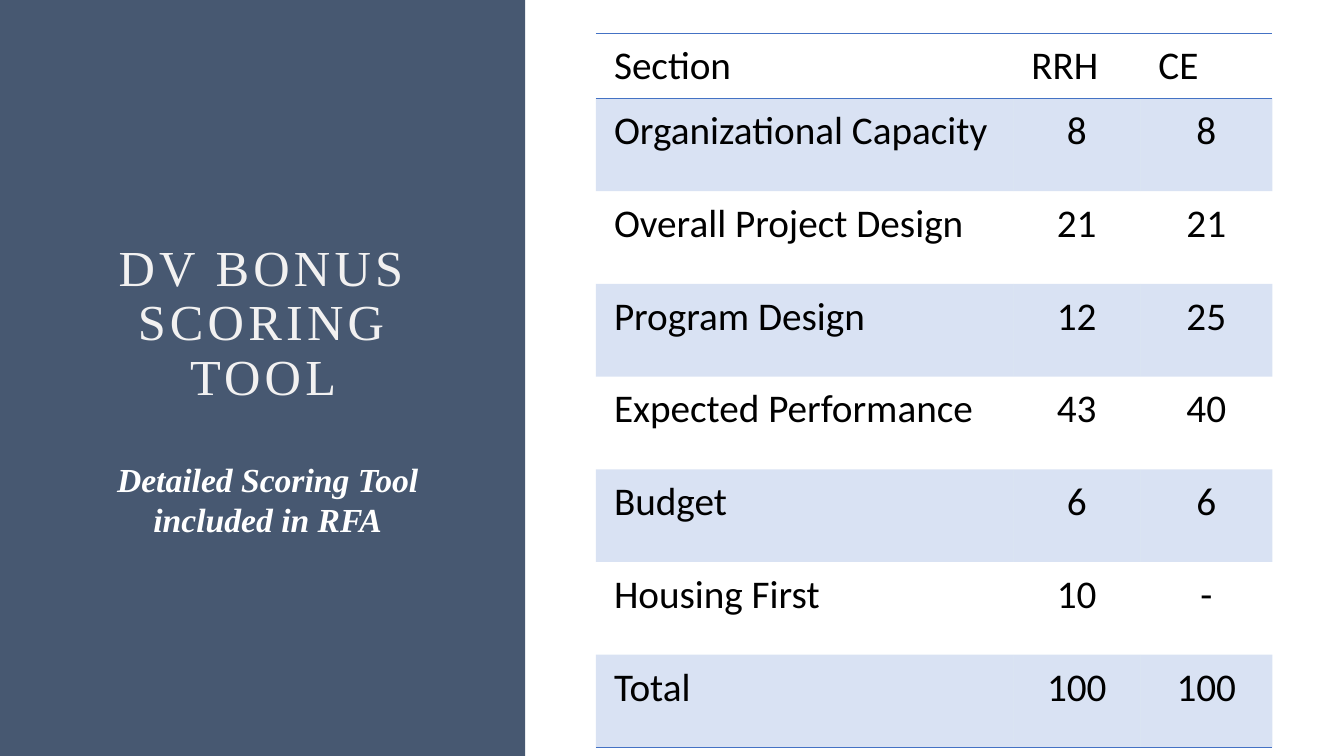
from dataclasses import dataclass

from lxml import etree
from pptx import Presentation, util as u
from pptx.dml.color import RGBColor
from pptx.enum import shapes, text
from pptx.oxml.ns import qn

# Content
TITLE = "DV BONUS SCORING TOOL"
SUBTITLE = "Detailed Scoring Tool included in RFA"
SCORES = [
    ("Section", "RRH", "CE"),
    ("Organizational Capacity", "8", "8"),
    ("Overall Project Design", "21", "21"),
    ("Program Design", "12", "25"),
    ("Expected Performance", "43", "40"),
    ("Budget", "6", "6"),
    ("Housing First", "10", "-"),
    ("Total", "100", "100"),
]


@dataclass(frozen=True)
class Theme:
    panel: str = "475871"
    title: str = "F2F1F1"
    subtitle: str = "FFFFFF"
    ink: str = "000000"
    accent: str = "4472C4"
    band_alpha: int = 20
    serif: str = "Times New Roman"
    sans: str = "Calibri"
    title_size: int = 36
    subtitle_size: int = 24
    cell_size: int = 28
    rule: int = 1


# Layout in inches
WIDTH, HEIGHT = 13.33, 7.5
PANEL_WIDTH = 5.21
TITLE_BOX = (0.94, 0.75, 3.34, 3.33)
SUBTITLE_BOX = (1.02, 4.5, 3.27, 2.25)
TABLE_LEFT, TABLE_TOP = 5.91, 0.33
COLUMNS = (4.14, 1.26, 1.31)
HEADER_HEIGHT, ROW_HEIGHT = 0.62, 0.92
INSET_X, INSET_Y = 0.18, 0.09

theme = Theme()


def style(span, font, size, color, bold=False, italic=False):
    span.font.name = font
    span.font.size = u.Pt(size)
    span.font.color.rgb = RGBColor.from_string(color)
    span.font.bold = bold
    span.font.italic = italic


def add_caption(page, place, words, anchor):
    box = page.shapes.add_textbox(*map(u.Inches, place))
    frame = box.text_frame
    frame.word_wrap = True
    frame.vertical_anchor = anchor
    frame.text = words
    para = frame.paragraphs[0]
    para.alignment = text.PP_ALIGN.CENTER
    return para


def set_borders(cell, top, bottom):
    """Rule the chosen edges and clear the others."""
    edges = {"a:lnL": False, "a:lnR": False, "a:lnT": top, "a:lnB": bottom}
    props = cell._tc.get_or_add_tcPr()
    for place, (tag, ruled) in enumerate(edges.items()):
        line = etree.Element(qn(tag), w=str(u.Pt(theme.rule) if ruled else 0))
        if ruled:
            fill = etree.SubElement(line, qn("a:solidFill"))
            etree.SubElement(fill, qn("a:srgbClr"), val=theme.accent)
        else:
            etree.SubElement(line, qn("a:noFill"))
        props.insert(place, line)


def fill_cell(cell, banded):
    if not banded:
        cell.fill.background()
        return
    cell.fill.solid()
    cell.fill.fore_color.rgb = RGBColor.from_string(theme.accent)
    color = cell._tc.tcPr.find(".//" + qn("a:srgbClr"))
    etree.SubElement(color, qn("a:alpha"), val=str(theme.band_alpha * 1000))


def add_panel(page):
    panel = page.shapes.add_shape(shapes.MSO_SHAPE.RECTANGLE, 0, 0,
                                  u.Inches(PANEL_WIDTH), u.Inches(HEIGHT))
    panel.shadow.inherit = False
    panel.fill.solid()
    panel.fill.fore_color.rgb = RGBColor.from_string(theme.panel)
    panel.line.fill.background()

    title = add_caption(page, TITLE_BOX, TITLE, text.MSO_ANCHOR.BOTTOM)
    title.line_spacing = 0.9
    span = title.runs[0]
    style(span, theme.serif, theme.title_size, theme.title)
    span.font._element.set("spc", "300")

    subtitle = add_caption(page, SUBTITLE_BOX, SUBTITLE, text.MSO_ANCHOR.TOP)
    subtitle.space_before = u.Pt(10)
    style(subtitle.runs[0], theme.serif, theme.subtitle_size, theme.subtitle,
          bold=True, italic=True)


def add_scores(page):
    heights = [HEADER_HEIGHT] + [ROW_HEIGHT] * (len(SCORES) - 1)
    place = (TABLE_LEFT, TABLE_TOP, sum(COLUMNS), sum(heights))
    table = page.shapes.add_table(len(SCORES), len(COLUMNS),
                                  *map(u.Inches, place)).table
    table.first_row = table.horz_banding = False
    for column, width in zip(table.columns, COLUMNS):
        column.width = u.Inches(width)
    for row, height in zip(table.rows, heights):
        row.height = u.Inches(height)

    ruled_edges = {0, 1, len(SCORES)}
    for r, values in enumerate(SCORES):
        for c, value in enumerate(values):
            cell = table.cell(r, c)
            cell.margin_left = cell.margin_right = u.Inches(INSET_X)
            cell.margin_top = cell.margin_bottom = u.Inches(INSET_Y)
            cell.text_frame.text = value
            para = cell.text_frame.paragraphs[0]
            centred = r > 0 and c > 0
            para.alignment = text.PP_ALIGN.CENTER if centred else text.PP_ALIGN.LEFT
            style(para.runs[0], theme.sans, theme.cell_size, theme.ink)
            fill_cell(cell, banded=r % 2 == 1)
            set_borders(cell, r in ruled_edges, r + 1 in ruled_edges)


def main():
    deck = Presentation()
    deck.slide_width, deck.slide_height = u.Inches(WIDTH), u.Inches(HEIGHT)
    page = deck.slides.add_slide(deck.slide_layouts[6])
    add_panel(page)
    add_scores(page)
    deck.save("out.pptx")


if __name__ == "__main__":
    main()
